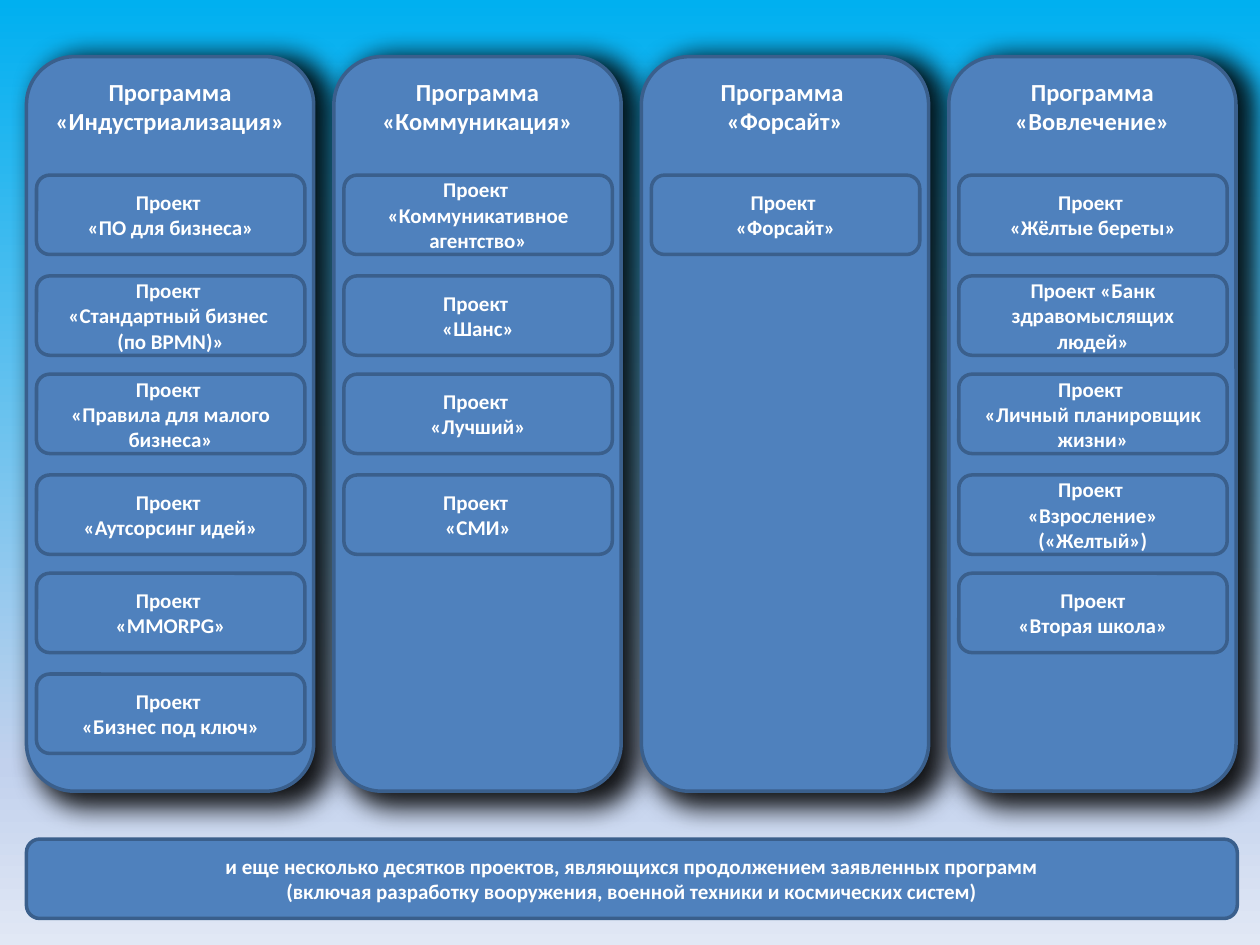
from copy import deepcopy
from dataclasses import dataclass

from lxml import etree
from pptx import Presentation
from pptx import util as u
from pptx.dml.color import RGBColor
from pptx.enum import shapes, text
from pptx.oxml import ns


@dataclass(frozen=True)
class Theme:
    font: str = "Calibri"
    fill: str = "4F81BD"
    line: str = "3A5F8C"
    ink: str = "FFFFFF"
    shadow: str = "000000"
    sky: tuple = ((0, "00B0F0"), (81, "C2D1ED"), (100, "E1E8F5"))
    heading_size: int = 14
    body_size: int = 12
    line_width: int = 2


class Board:
    def __init__(self, page, theme):
        self.page = page
        self.theme = theme

    def background(self):
        fill = self.page.background.fill
        fill.gradient()
        fill.gradient_angle = 270
        # The default gradient has two stops; a third is cloned from the last
        last = fill.gradient_stops[-1]._gs
        last.addnext(deepcopy(last))
        for stop, (position, color) in zip(fill.gradient_stops, self.theme.sky):
            stop.position = position / 100
            stop.color.rgb = RGBColor.from_string(color)

    def box(self, left, top, width, height, wording, size=None,
            anchor=text.MSO_ANCHOR.MIDDLE):
        theme = self.theme
        box = self.page.shapes.add_shape(
            shapes.MSO_SHAPE.ROUNDED_RECTANGLE,
            u.Inches(left), u.Inches(top), u.Inches(width), u.Inches(height))
        box.shadow.inherit = False
        box.fill.solid()
        box.fill.fore_color.rgb = RGBColor.from_string(theme.fill)
        box.line.color.rgb = RGBColor.from_string(theme.line)
        box.line.width = u.Pt(theme.line_width)

        frame = box.text_frame
        frame.word_wrap = True
        frame.vertical_anchor = anchor
        para = frame.paragraphs[0]
        para.text = wording.replace("\n", "\v")
        para.alignment = text.PP_ALIGN.CENTER
        for span in para.runs:
            span.font.name = theme.font
            span.font.size = u.Pt(size or theme.body_size)
            span.font.bold = True
            span.font.color.rgb = RGBColor.from_string(theme.ink)
        return box

    def column(self, left, top, width, height, wording):
        box = self.box(left, top, width, height, wording,
                       self.theme.heading_size, text.MSO_ANCHOR.TOP)
        effects = box._element.spPr.find(ns.qn("a:effectLst"))
        shadow = etree.SubElement(
            effects, ns.qn("a:outerShdw"),
            blurRad=str(u.Pt(15)), dist=str(u.Pt(6)), dir="0",
            sx="102000", sy="102000", algn="tl", rotWithShape="0")
        color = etree.SubElement(shadow, ns.qn("a:srgbClr"), val=self.theme.shadow)
        etree.SubElement(color, ns.qn("a:alpha"), val="89000")


PROGRAMS = [
    ("Программа «Индустриализация»", [
        "Проект \n«ПО для бизнеса»",
        "Проект \n«Стандартный бизнес \n(по BPMN)»",
        "Проект \n«Правила для малого бизнеса»",
        "Проект \n«Аутсорсинг идей»",
        "Проект \n«MMORPG»",
        "Проект \n«Бизнес под ключ»"]),
    ("Программа «Коммуникация»", [
        "Проект \n«Коммуникативное агентство»",
        "Проект \n«Шанс»",
        "Проект \n«Лучший»",
        "Проект \n«СМИ»"]),
    ("Программа \n«Форсайт»", [
        "Проект \n«Форсайт»"]),
    ("Программа «Вовлечение»", [
        "Проект \n«Жёлтые береты»",
        "Проект «Банк здравомыслящих людей»",
        "Проект \n«Личный планировщик жизни»",
        "Проект \n«Взросление» («Желтый»)",
        "Проект\n«Вторая школа»"]),
]
FOOTER = ("и еще несколько десятков проектов, являющихся продолжением "
          "заявленных программ\n"
          "(включая разработку вооружения, военной техники и космических систем)")

# Layout in inches
MARGIN, COLUMN_STEP = 0.21, 2.44
COLUMN_TOP, COLUMN_WIDTH, COLUMN_HEIGHT = 0.45, 2.28, 5.83
PROJECT_INDENT, PROJECT_TOP, PROJECT_WIDTH = 0.08, 1.39, 2.13
BOX_HEIGHT = 0.63
PAIR_STEP, ROW_STEP = 1.58, 0.8  # projects are stacked in pairs
FOOTER_TOP, FOOTER_WIDTH = 6.66, 9.61


def main():
    deck = Presentation()
    deck.slide_width, deck.slide_height = u.Inches(10), u.Inches(7.5)
    board = Board(deck.slides.add_slide(deck.slide_layouts[6]), Theme())
    board.background()

    # Program columns with their projects
    for index, (program, projects) in enumerate(PROGRAMS):
        left = MARGIN + index * COLUMN_STEP
        board.column(left, COLUMN_TOP, COLUMN_WIDTH, COLUMN_HEIGHT, program)
        for row, project in enumerate(projects):
            pair, second = divmod(row, 2)
            top = PROJECT_TOP + pair * PAIR_STEP + second * ROW_STEP
            board.box(left + PROJECT_INDENT, top, PROJECT_WIDTH, BOX_HEIGHT, project)

    # Footer bar
    board.box(MARGIN, FOOTER_TOP, FOOTER_WIDTH, BOX_HEIGHT, FOOTER)
    deck.save("out.pptx")


if __name__ == "__main__":
    main()
